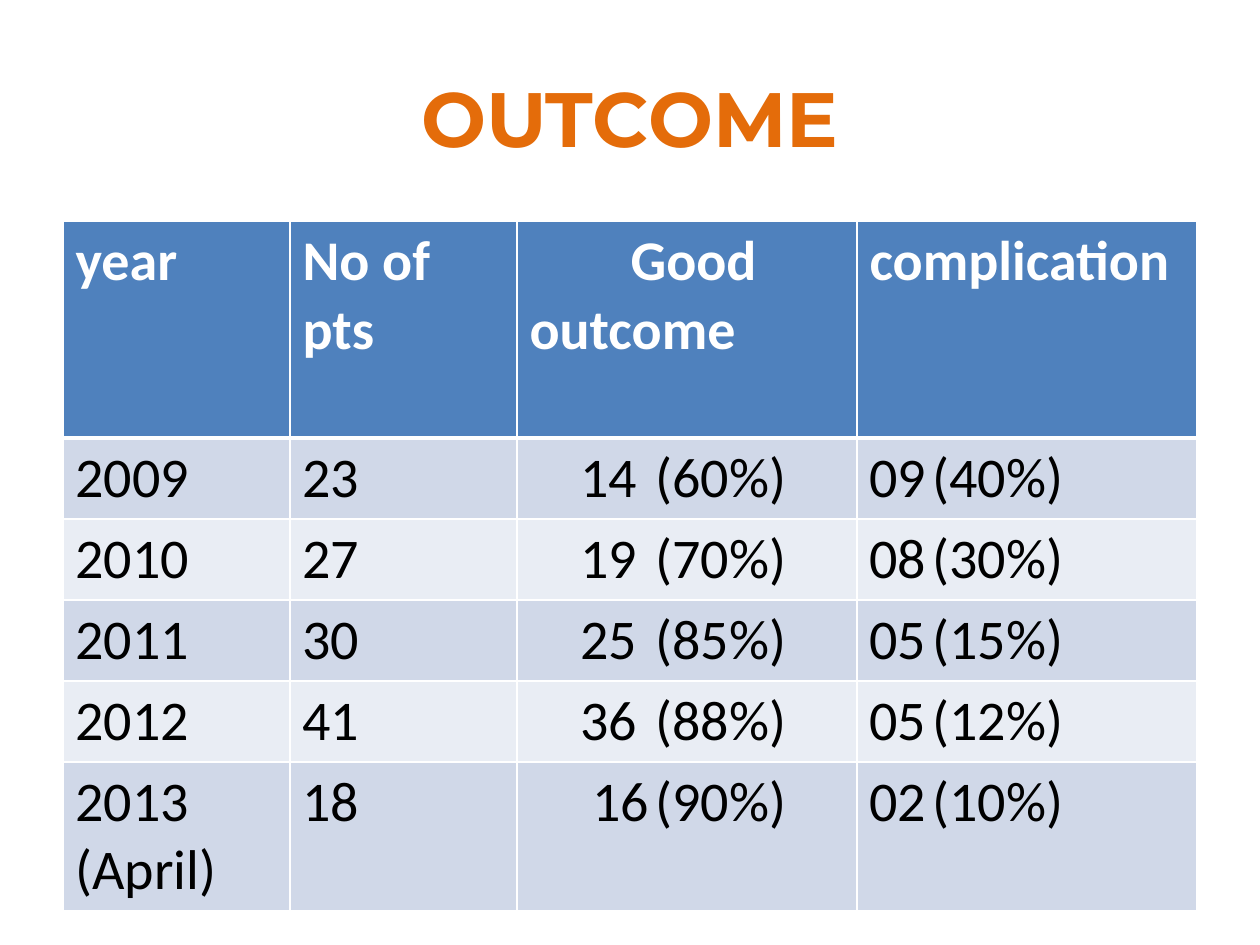
import pptx
import pptx.dml.color
import pptx.enum.text
import pptx.oxml
import pptx.oxml.ns
import pptx.util

TITLE = "OUTCOME"
HEADER = ("year", "No of pts", "Good outcome", "complication")
RESULTS = [
    ("2009", "23", "14\t(60%)", "09\t(40%)"),
    ("2010", "27", "19\t(70%)", "08\t(30%)"),
    ("2011", "30", "25\t(85%)", "05\t(15%)"),
    ("2012", "41", "36\t(88%)", "05\t(12%)"),
    ("2013 (April)", "18", "16\t(90%)", "02\t(10%)"),
]
GOOD_COLUMN = 2
GOOD_INDENTS = (101, 51, 51, 51, 51, 63)
TAB_STOPS = {2: 146, 3: 82}

SLIDE_SIZE = (1260, 945)
TITLE_BOX = (63, 38, 1134, 157)
TABLE_ORIGIN = (63, 221)
COLUMN_WIDTHS = (227, 227, 340, 340)
ROW_HEIGHTS = (217, 81, 81, 81, 81, 149)

THEME = {
    "title": {"name": "Montserrat", "size": 44, "bold": True, "color": "E46C0A"},
    "header": {"name": "Calibri", "size": 32, "bold": True, "color": "FFFFFF"},
    "body": {"name": "Calibri", "size": 32, "bold": False, "color": "000000"},
    "header_fill": "4F81BD",
    "bands": ("D0D8E8", "E9EDF4"),
    "border": "FFFFFF",
    "border_width": 1,
    "header_rule_width": 3,
}


def px(length):
    return pptx.util.Emu(round(length * 914400 / 126))


def rgb(value):
    return pptx.dml.color.RGBColor.from_string(value)


def write(paragraph, text, style):
    run = paragraph.add_run()
    run.text = text
    values = {**style, "size": pptx.util.Pt(style["size"])}
    run.font.color.rgb = rgb(values.pop("color"))
    for name, value in values.items():
        setattr(run.font, name, value)


def set_borders(cell, widths):
    """Draw the cell's edges; widths maps L, R, T and B, in that order, to points."""
    properties = cell._tc.get_or_add_tcPr()
    for position, (side, width) in enumerate(widths.items()):
        line = pptx.oxml.parse_xml(
            f'<a:ln{side} {pptx.oxml.ns.nsdecls("a")} w="{pptx.util.Pt(width)}">'
            f'<a:solidFill><a:srgbClr val="{THEME["border"]}"/></a:solidFill></a:ln{side}>'
        )
        properties.insert(position, line)


def set_indent(paragraph, first_line, tab_stop):
    properties = paragraph._p.get_or_add_pPr()
    properties.set("marL", "0")
    properties.set("indent", str(px(first_line)))
    properties.append(pptx.oxml.parse_xml(
        f'<a:tabLst {pptx.oxml.ns.nsdecls("a")}>'
        f'<a:tab pos="{px(tab_stop)}" algn="l"/></a:tabLst>'
    ))


def add_title(slide):
    frame = slide.shapes.add_textbox(*map(px, TITLE_BOX)).text_frame
    frame.word_wrap = True
    frame.vertical_anchor = pptx.enum.text.MSO_ANCHOR.MIDDLE
    paragraph = frame.paragraphs[0]
    paragraph.alignment = pptx.enum.text.PP_ALIGN.CENTER
    write(paragraph, TITLE, THEME["title"])


def fill_cell(cell, text, row, column):
    is_header = row == 0
    cell.fill.solid()
    cell.fill.fore_color.rgb = rgb(
        THEME["header_fill"] if is_header else THEME["bands"][(row - 1) % 2])
    borders = dict.fromkeys("LRTB", THEME["border_width"])
    if row < 2:
        borders["B" if is_header else "T"] = THEME["header_rule_width"]
    set_borders(cell, borders)
    paragraph = cell.text_frame.paragraphs[0]
    if column in TAB_STOPS:
        first_line = GOOD_INDENTS[row] if column == GOOD_COLUMN else 0
        set_indent(paragraph, first_line, TAB_STOPS[column])
    write(paragraph, text, THEME["header" if is_header else "body"])


def add_results(slide):
    rows = [HEADER, *RESULTS]
    size = (sum(COLUMN_WIDTHS), sum(ROW_HEIGHTS))
    table = slide.shapes.add_table(
        len(rows), len(HEADER), *map(px, TABLE_ORIGIN + size)).table
    for column, width in zip(table.columns, COLUMN_WIDTHS):
        column.width = px(width)
    for row, height in zip(table.rows, ROW_HEIGHTS):
        row.height = px(height)
    for row, texts in enumerate(rows):
        for column, text in enumerate(texts):
            fill_cell(table.cell(row, column), text, row, column)


def main():
    presentation = pptx.Presentation()
    presentation.slide_width, presentation.slide_height = map(px, SLIDE_SIZE)
    slide = presentation.slides.add_slide(presentation.slide_layouts[6])
    add_title(slide)
    add_results(slide)
    presentation.save("out.pptx")


if __name__ == "__main__":
    main()
